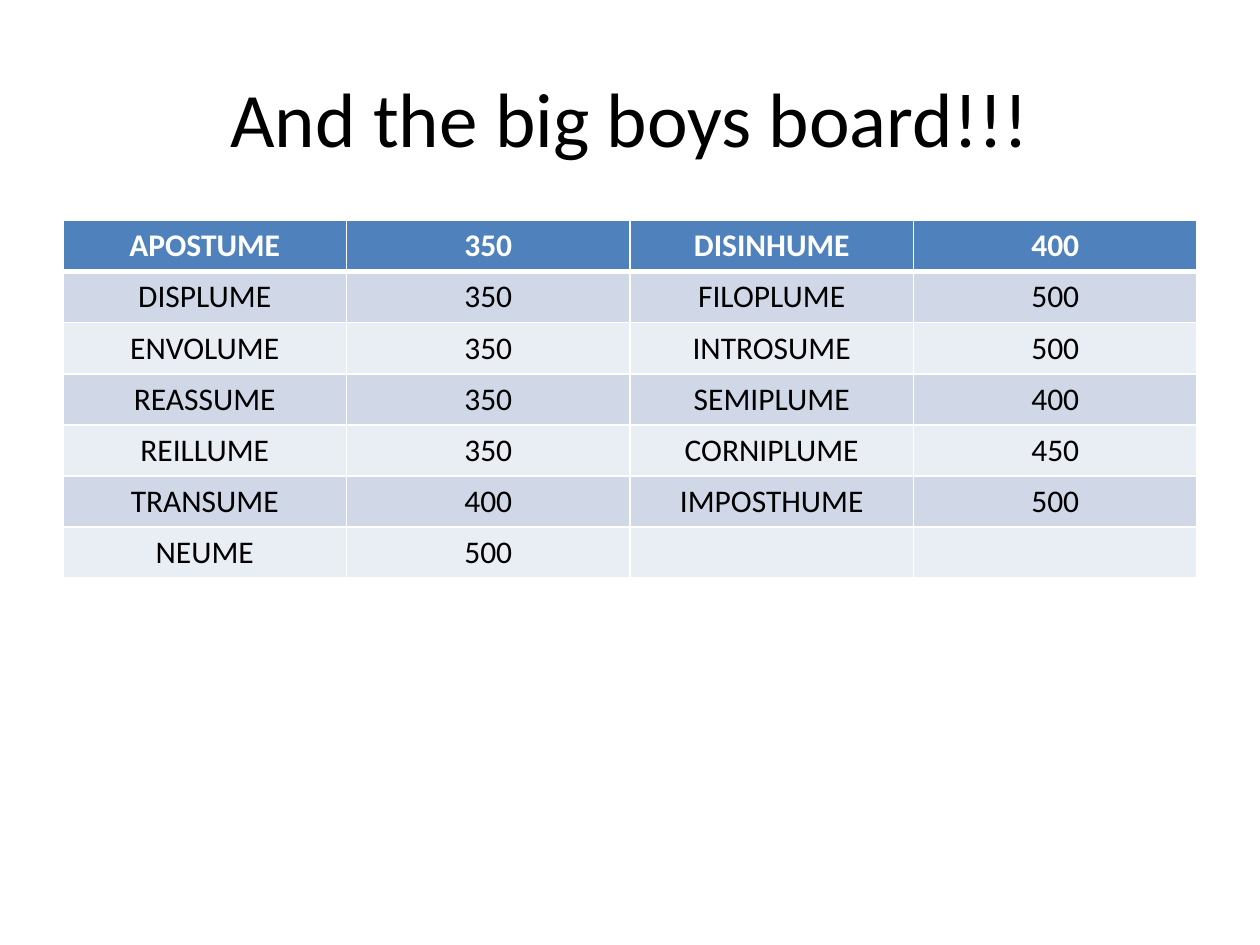
from lxml.etree import SubElement
from pptx import Presentation
from pptx.dml.color import RGBColor
from pptx.enum.text import MSO_ANCHOR as Anchor, PP_ALIGN as Align
from pptx.oxml.ns import qn
from pptx.util import Inches, Pt

FONT = "Calibri"
COLORS = {
    "text": "000000",
    "white": "FFFFFF",
    "header": "4F81BD",
    "odd": "D0D8E8",
    "even": "E9EDF4",
}
WORD_SCORES = [
    ("APOSTUME", "350", "DISINHUME", "400"),
    ("DISPLUME", "350", "FILOPLUME", "500"),
    ("ENVOLUME", "350", "INTROSUME", "500"),
    ("REASSUME", "350", "SEMIPLUME", "400"),
    ("REILLUME", "350", "CORNIPLUME", "450"),
    ("TRANSUME", "400", "IMPOSTHUME", "500"),
    ("NEUME", "500", "", ""),
]


def rgb(name):
    return RGBColor.from_string(COLORS[name])


def write_centered(text_frame, text, size, color, bold=False):
    paragraph = text_frame.paragraphs[0]
    paragraph.alignment = Align.CENTER
    if not text:
        return
    run = paragraph.add_run()
    run.text = text
    run.font.name = FONT
    run.font.size = Pt(size)
    run.font.bold = bold
    run.font.color.rgb = rgb(color)


def add_title(slide, text):
    title = slide.shapes.add_textbox(Inches(0.5), Inches(0.3), Inches(9), Inches(1.25))
    title.text_frame.word_wrap = True
    title.text_frame.vertical_anchor = Anchor.MIDDLE
    write_centered(title.text_frame, text, 44, "text")


def set_borders(cell, top=1, bottom=1):
    properties = cell._tc.get_or_add_tcPr()
    for side, width in (("L", 1), ("R", 1), ("T", top), ("B", bottom)):
        line = SubElement(properties, qn(f"a:ln{side}"), w=str(Pt(width)))
        fill = SubElement(line, qn("a:solidFill"))
        SubElement(fill, qn("a:srgbClr"), val=COLORS["white"])


def style_cell(cell, row_index):
    is_header = row_index == 0
    set_borders(cell, top=3 if row_index == 1 else 1, bottom=3 if is_header else 1)
    band = "header" if is_header else "odd" if row_index % 2 else "even"
    cell.fill.solid()
    cell.fill.fore_color.rgb = rgb(band)


def add_score_table(slide, rows):
    frame = slide.shapes.add_table(
        len(rows), len(rows[0]), Inches(0.5), Inches(1.75), Inches(9), Inches(2.84)
    )
    table = frame.table
    for row_index, row in enumerate(rows):
        is_header = row_index == 0
        for column_index, text in enumerate(row):
            cell = table.cell(row_index, column_index)
            style_cell(cell, row_index)
            color = "white" if is_header else "text"
            write_centered(cell.text_frame, text, 18, color, is_header)


def main():
    presentation = Presentation()
    presentation.slide_width = Inches(10)
    presentation.slide_height = Inches(7.5)
    slide = presentation.slides.add_slide(presentation.slide_layouts[6])
    add_title(slide, "And the big boys board!!!")
    add_score_table(slide, WORD_SCORES)
    presentation.save("out.pptx")


if __name__ == "__main__":
    main()
